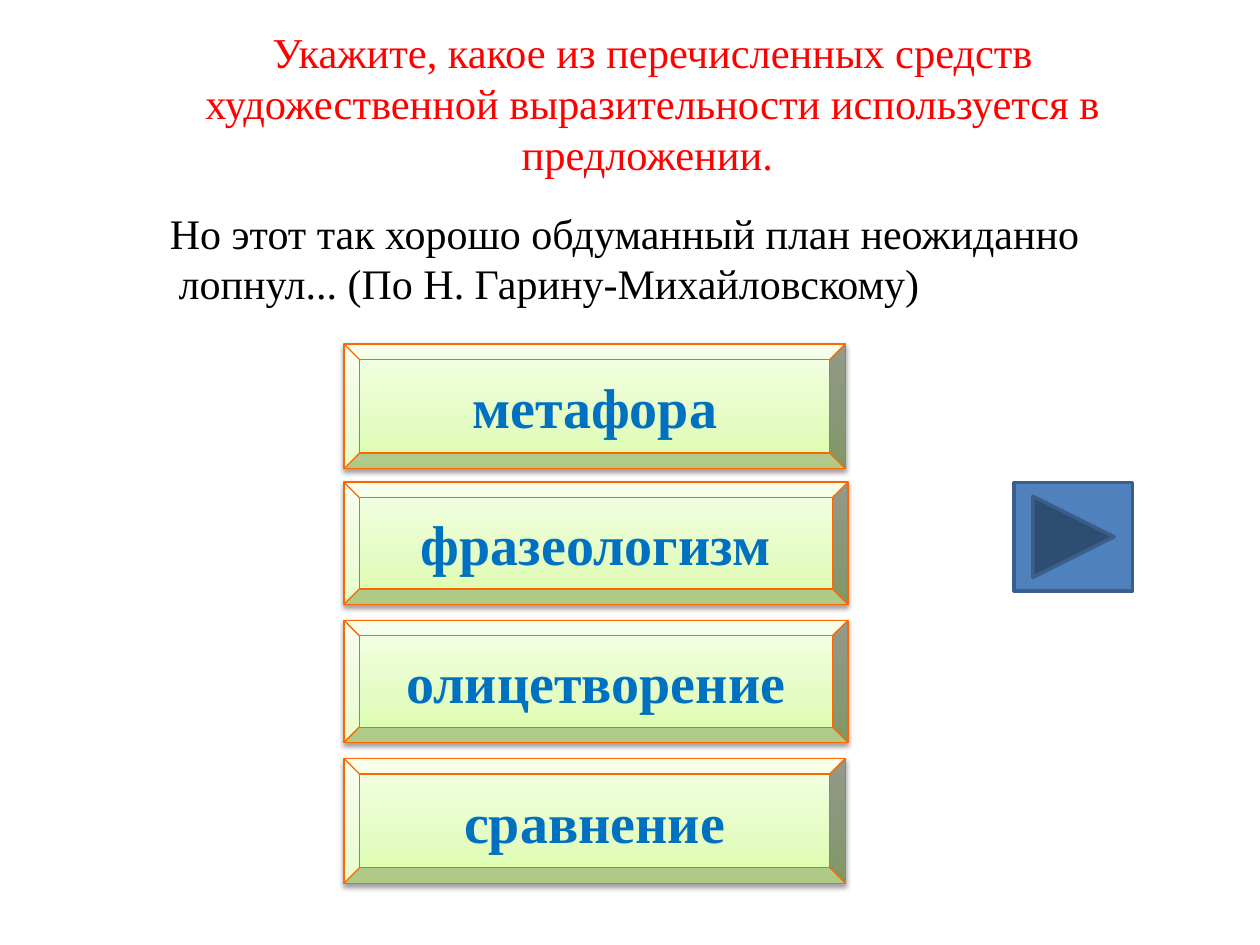
"""Build a quiz slide with a question, four bevelled answers and a next button."""
import copy
from dataclasses import dataclass

import lxml.etree
import pptx
import pptx.dml.color
import pptx.enum.shapes
import pptx.enum.text
import pptx.oxml.ns
import pptx.util

SHAPE = pptx.enum.shapes.MSO_SHAPE
ANCHOR = pptx.enum.text.MSO_ANCHOR
ALIGN = pptx.enum.text.PP_ALIGN
qn = pptx.oxml.ns.qn
rgb = pptx.dml.color.RGBColor.from_string
Inches, Pt = pptx.util.Inches, pptx.util.Pt
SLIDE_W, SLIDE_H = Inches(10), Inches(7.5)


@dataclass(frozen=True)
class Theme:
    font: str = "Times New Roman"
    question: str = "FF0000"
    quote: str = "000000"
    answer: str = "0070C0"
    answer_line: str = "FF6600"
    answer_stops: tuple = ((0, "DAFDA7"), (0.35, "E4FCC2"), (1, "F5FFE7"))
    button: str = "4F81BD"
    button_line: str = "3A5F8C"
    question_size: float = 24.3
    quote_size: float = 24
    answer_size: float = 32


@dataclass(frozen=True)
class Box:
    """Position and size as percentages of the slide."""
    x: float
    y: float
    w: float
    h: float

    def emu(self) -> tuple:
        return tuple(round(share * full / 100) for share, full in
                     zip((self.x, self.y, self.w, self.h), (SLIDE_W, SLIDE_H) * 2))


@dataclass(frozen=True)
class Answer:
    text: str
    row: int
    w: float
    h: float


THEME = Theme()
ANSWER_X, ANSWER_Y, ROW_PITCH = 27.3, 36.4, 14.62
ANSWERS = (
    Answer("метафора", 0, 39.8, 13.2),
    Answer("фразеологизм", 1, 40, 12.93),
    Answer("олицетворение", 2, 40, 12.93),
    Answer("сравнение", 3, 39.8, 13.2),
)


def write(sp, text: str, *, size: float, color: str, bold: bool = False,
          align=ALIGN.LEFT, anchor=ANCHOR.TOP, spacing: float = None,
          side: float = 0.1, top: float = 0.05) -> None:
    """Put one formatted paragraph in a shape."""
    tf = sp.text_frame
    tf.word_wrap = True
    tf.auto_size = pptx.enum.text.MSO_AUTO_SIZE.NONE
    tf.vertical_anchor = anchor
    tf.margin_left = tf.margin_right = Inches(side)
    tf.margin_top = Inches(top)
    p = tf.paragraphs[0]
    p.alignment = align
    if spacing:
        p.line_spacing = Pt(spacing)
    r = p.add_run()
    r.text = text
    r.font.name, r.font.size, r.font.bold = THEME.font, Pt(size), bold
    r.font.color.rgb = rgb(color)


def add_outlined(s, kind, box: Box, line: str, width: float):
    """Add a preset shape with a plain outline and no shadow."""
    sp = s.shapes.add_shape(kind, *box.emu())
    sp.shadow.inherit = False
    sp.line.color.rgb = rgb(line)
    sp.line.width = Pt(width)
    return sp


def add_answer(s, answer: Answer) -> None:
    """Add a bevelled answer with a gradient and a soft shadow."""
    box = Box(ANSWER_X, ANSWER_Y + answer.row * ROW_PITCH, answer.w, answer.h)
    sp = add_outlined(s, SHAPE.BEVEL, box, THEME.answer_line, 0.75)
    sp.fill.gradient()
    sp.fill.gradient_angle = 90
    stops = sp.element.spPr.find(".//" + qn("a:gsLst"))
    stops.append(copy.deepcopy(stops[0]))
    for stop, (position, color) in zip(sp.fill.gradient_stops, THEME.answer_stops):
        stop.position = position
        stop.color.rgb = rgb(color)
    effects = sp.element.spPr.find(qn("a:effectLst"))
    shadow = lxml.etree.SubElement(
        effects, qn("a:outerShdw"), blurRad=str(Pt(3.1)), dist=str(Pt(1.6)),
        dir="5400000", rotWithShape="0")
    color = lxml.etree.SubElement(shadow, qn("a:srgbClr"), val="000000")
    lxml.etree.SubElement(color, qn("a:alpha"), val="38000")
    write(sp, answer.text, size=THEME.answer_size, color=THEME.answer, bold=True,
          align=ALIGN.CENTER, anchor=ANCHOR.MIDDLE)


def add_question(s) -> None:
    """Place the question in the title."""
    sp = s.shapes.title
    sp.left, sp.top, sp.width, sp.height = Box(8.6, 2.13, 86.4, 17.33).emu()
    write(sp, "Укажите, какое из перечисленных средств художественной "
          "выразительности используется в предложении. ",
          size=THEME.question_size, color=THEME.question, align=ALIGN.CENTER,
          spacing=29.1, side=0.3)


def add_quote(s) -> None:
    """Add the sentence to analyse, with a hanging indent."""
    sp = s.shapes.add_textbox(*Box(9.4, 20.8, 85.6, 68.53).emu())
    write(sp, "Но этот так хорошо обдуманный план неожиданно лопнул... "
          "(По Н. Гарину-Михайловскому)",
          size=THEME.quote_size, color=THEME.quote, spacing=28.6, top=0.09)
    pPr = sp.text_frame.paragraphs[0]._p.get_or_add_pPr()
    pPr.set("marL", str(Inches(0.38)))
    pPr.set("indent", str(Inches(-0.07)))


def main() -> None:
    """Build and save the slide."""
    prs = pptx.Presentation()
    prs.slide_width, prs.slide_height = SLIDE_W, SLIDE_H
    s = prs.slides.add_slide(prs.slide_layouts[5])
    add_question(s)
    add_quote(s)
    for answer in ANSWERS:
        add_answer(s, answer)
    button = add_outlined(s, SHAPE.ACTION_BUTTON_FORWARD_OR_NEXT,
                          Box(80.5, 51.07, 9.4, 11.47), THEME.button_line, 2)
    button.fill.solid()
    button.fill.fore_color.rgb = rgb(THEME.button)
    prs.save("out.pptx")


if __name__ == "__main__":
    main()
